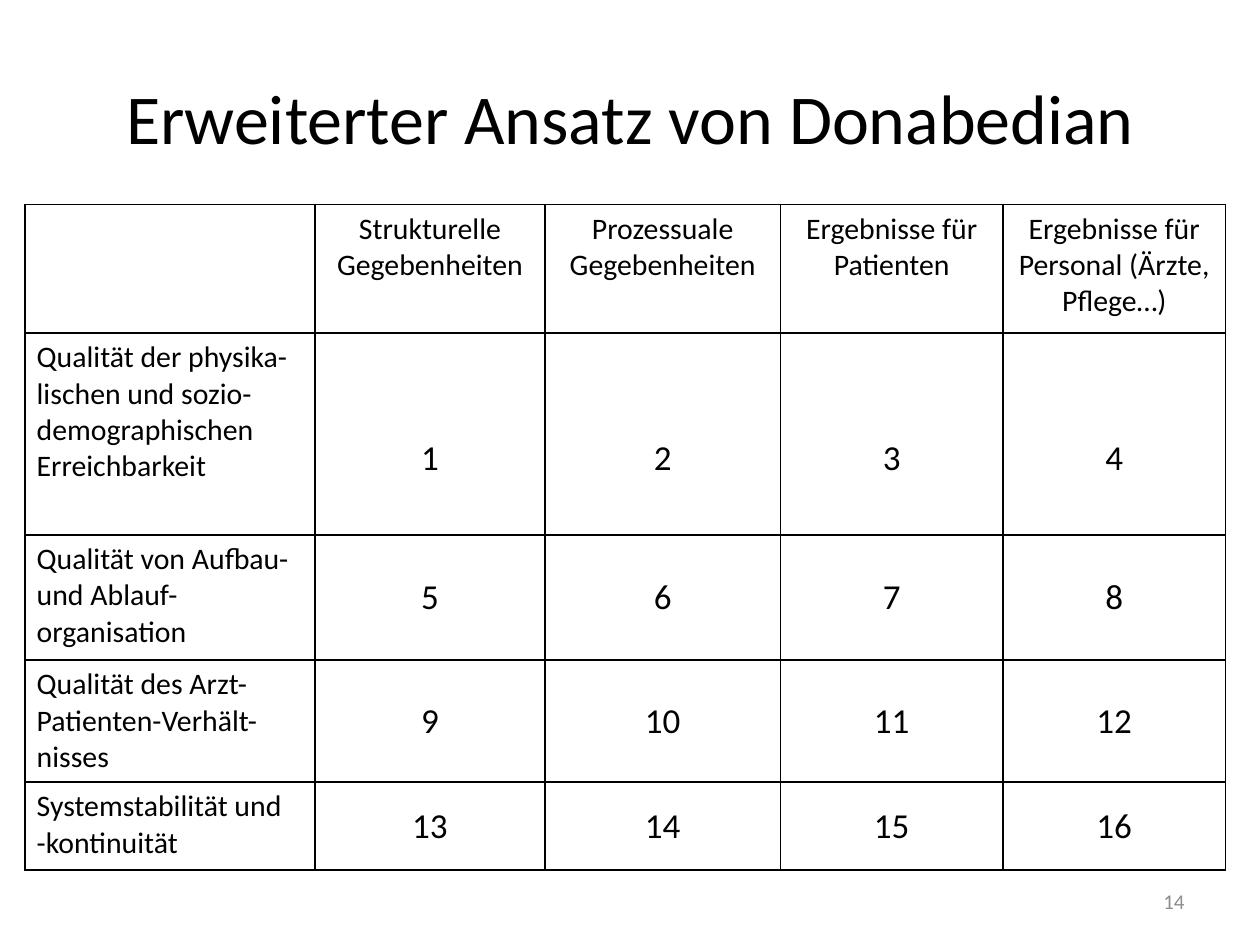
import pptx
import pptx.dml.color
import pptx.enum.text
import pptx.oxml
import pptx.oxml.ns
import pptx.util

Pt = pptx.util.Pt
ALIGN = pptx.enum.text.PP_ALIGN
ANCHOR = pptx.enum.text.MSO_ANCHOR
BLACK = pptx.dml.color.RGBColor(0x00, 0x00, 0x00)
GREY = pptx.dml.color.RGBColor(0x8C, 0x8C, 0x8C)
FONT = "Calibri"
LABEL_SIZE = 17
NUMBER_SIZE = 20
FIRST_ROW_DROP = 28.4

HEADINGS = [
    "Strukturelle Gegebenheiten",
    "Prozessuale Gegebenheiten",
    "Ergebnisse für Patienten",
    "Ergebnisse für Personal (Ärzte, Pflege…)",
]
QUALITIES = [
    "Qualität der physika-lischen und sozio-demographischen Erreichbarkeit",
    "Qualität von Aufbau- und Ablauf-organisation",
    "Qualität des Arzt-Patienten-Verhält-nisses",
    "Systemstabilität und  -kontinuität",
]
COLUMN_WIDTHS = [165.9, 131.3, 134.7, 127.1, 127.2]
ROW_HEIGHTS = [73.6, 115.2, 71.7, 69.6, 50.4]


def write_text(frame, text, size, color, align):
    frame.text = text
    para = frame.paragraphs[0]
    para.alignment = align
    for span in para.runs:
        span.font.name = FONT
        span.font.size = Pt(size)
        span.font.color.rgb = color
    return para


def add_text(page, left, top, width, height, text, size, color, align):
    box = page.shapes.add_textbox(Pt(left), Pt(top), Pt(width), Pt(height))
    frame = box.text_frame
    frame.word_wrap = True
    frame.vertical_anchor = ANCHOR.MIDDLE
    write_text(frame, text, size, color, align)


def set_borders(cell):
    properties = cell._tc.get_or_add_tcPr()
    for position, side in enumerate(("lnL", "lnR", "lnT", "lnB")):
        border = pptx.oxml.parse_xml(
            f'<a:{side} {pptx.oxml.ns.nsdecls("a")} w="{Pt(1)}">'
            f'<a:solidFill><a:srgbClr val="{BLACK}"/></a:solidFill></a:{side}>'
        )
        properties.insert(position, border)


def fill_cell(cell, text, size, align, anchor):
    cell.fill.background()
    cell.margin_left = cell.margin_right = Pt(6.8)
    cell.margin_top = cell.margin_bottom = Pt(3.6)
    cell.vertical_anchor = anchor
    para = write_text(cell.text_frame, text, size, BLACK, align)
    para.space_before = Pt(size * 0.2)
    set_borders(cell)


def add_matrix(page, left, top):
    frame = page.shapes.add_table(
        len(ROW_HEIGHTS), len(COLUMN_WIDTHS), Pt(left), Pt(top),
        Pt(sum(COLUMN_WIDTHS)), Pt(sum(ROW_HEIGHTS)),
    )
    table = frame.table
    table.first_row = False
    table.horz_banding = False
    for column, width in zip(table.columns, COLUMN_WIDTHS):
        column.width = Pt(width)
    for row, height in zip(table.rows, ROW_HEIGHTS):
        row.height = Pt(height)
    for index, heading in enumerate([""] + HEADINGS):
        fill_cell(table.cell(0, index), heading, LABEL_SIZE, ALIGN.CENTER, ANCHOR.TOP)
    for row, quality in enumerate(QUALITIES, 1):
        fill_cell(table.cell(row, 0), quality, LABEL_SIZE, ALIGN.LEFT, ANCHOR.TOP)
        for column in range(1, len(COLUMN_WIDTHS)):
            number = (row - 1) * len(HEADINGS) + column
            cell = table.cell(row, column)
            fill_cell(cell, str(number), NUMBER_SIZE, ALIGN.CENTER, ANCHOR.MIDDLE)
            if row == 1:
                cell.margin_top = Pt(3.6 + FIRST_ROW_DROP)


def main():
    deck = pptx.Presentation()
    deck.slide_width = Pt(720)
    deck.slide_height = Pt(540)
    page = deck.slides.add_slide(deck.slide_layouts[6])
    add_text(page, 36, 21.6, 648, 90, "Erweiterter Ansatz von Donabedian", 40, BLACK, ALIGN.CENTER)
    add_matrix(page, 14.2, 116.8)
    add_text(page, 516, 500.5, 168, 28.75, "14", 12, GREY, ALIGN.RIGHT)
    deck.save("out.pptx")


if __name__ == "__main__":
    main()
